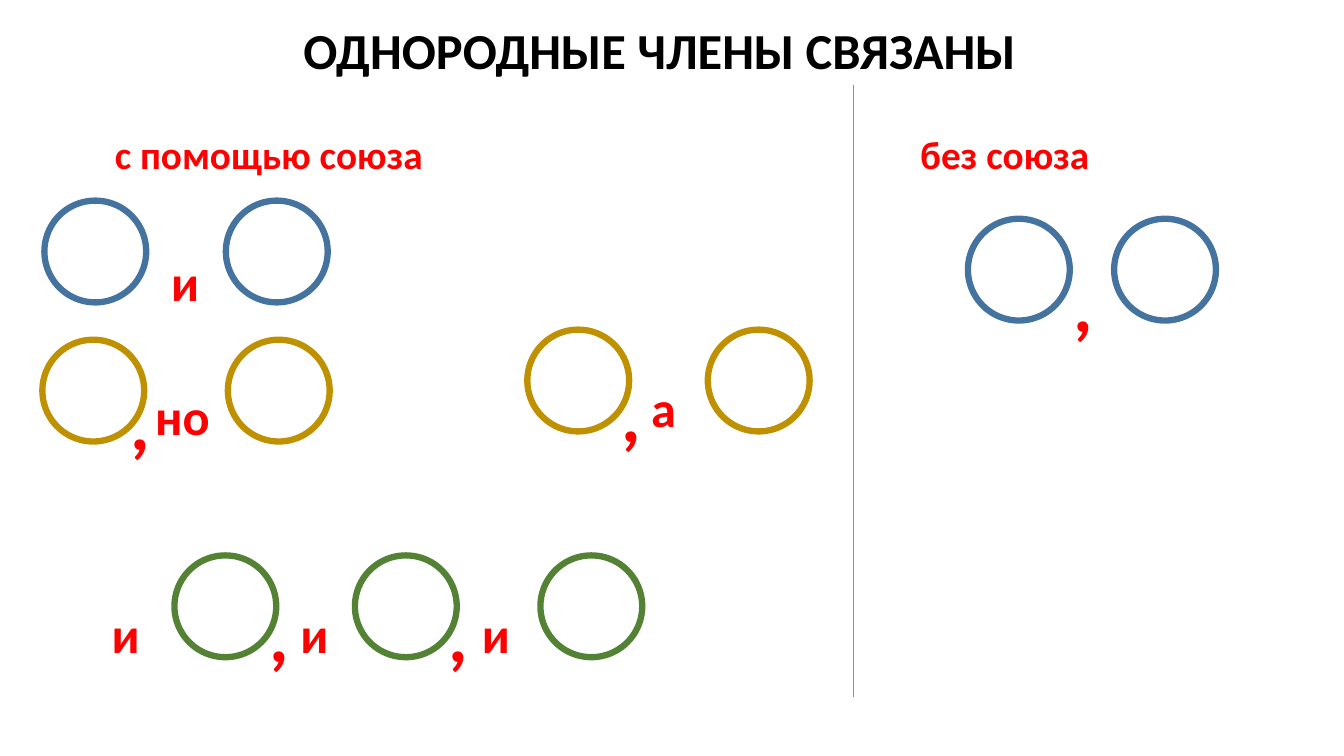
from dataclasses import dataclass

from lxml.etree import SubElement
from pptx import Presentation
from pptx.dml.color import RGBColor
from pptx.enum.shapes import MSO_CONNECTOR, MSO_SHAPE
from pptx.enum.text import MSO_ANCHOR, MSO_AUTO_SIZE, PP_ALIGN
from pptx.oxml.ns import qn
from pptx.util import Pt

EMU_PER_PX = 9144  # 100 px to the inch


@dataclass(frozen=True)
class Theme:
    font: str = "Calibri"
    black: str = "000000"
    red: str = "FF0000"
    blue: str = "43739E"
    gold: str = "BF9000"
    green: str = "548235"
    divider: str = "5B9BD5"
    heading_size: int = 28
    word_size: int = 36
    comma_size: int = 54
    ring_width: float = 4.5
    divider_width: float = 0.5


def px(*lengths):
    return [length * EMU_PER_PX for length in lengths]


def set_attributes(target, values):
    for name, value in values.items():
        setattr(target, name, value)


class SlideBuilder:
    def __init__(self, slide, theme):
        self.slide = slide
        self.theme = theme

    def fill_text(self, shape, box, text, size, color, alignment=PP_ALIGN.LEFT):
        set_attributes(shape, dict(zip(("left", "top", "width", "height"), px(*box))))
        frame = shape.text_frame
        set_attributes(frame, {
            "text": text,
            "word_wrap": True,
            "auto_size": MSO_AUTO_SIZE.NONE,
            "vertical_anchor": MSO_ANCHOR.TOP,
        })
        paragraph = frame.paragraphs[0]
        paragraph.alignment = alignment
        font = paragraph.runs[0].font
        set_attributes(font, {"name": self.theme.font, "size": Pt(size), "bold": True})
        font.color.rgb = RGBColor.from_string(color)

    def title(self, box, text):
        self.fill_text(self.slide.shapes.title, box, text,
                       self.theme.word_size, self.theme.black)

    def label(self, box, text, size, alignment=PP_ALIGN.LEFT):
        shape = self.slide.shapes.add_textbox(*px(*box))
        self.fill_text(shape, box, text, size, self.theme.red, alignment)

    def heading(self, left, text, alignment=PP_ALIGN.LEFT):
        self.label((left, 124, 345, 57), text, self.theme.heading_size, alignment)

    def conjunction(self, left, top, text):
        self.label((left, top, 79, 71), text, self.theme.word_size)

    def comma(self, left, top):
        self.label((left, top, 79, 101), ",", self.theme.comma_size)

    def ring(self, left, top, color):
        shape = self.slide.shapes.add_shape(MSO_SHAPE.OVAL, *px(left, top, 101, 101))
        shape.shadow.inherit = False
        shape.fill.background()
        shape.line.color.rgb = RGBColor.from_string(color)
        shape.line.width = Pt(self.theme.ring_width)

    def divider(self, left, top, bottom):
        connector = self.slide.shapes.add_connector(
            MSO_CONNECTOR.STRAIGHT, *px(left, top, left, bottom))
        connector.line.color.rgb = RGBColor.from_string(self.theme.divider)
        connector.line.width = Pt(self.theme.divider_width)
        SubElement(connector._element.spPr, qn("a:effectLst"))

    def scheme(self, top, color, rings, words=(), word_top=0, commas=(), comma_top=0):
        """Draw one row of rings with its conjunctions and commas."""
        for left in rings:
            self.ring(left, top, color)
        for left, word in words:
            self.conjunction(left, word_top, word)
        for left in commas:
            self.comma(left, comma_top)


def main():
    presentation = Presentation()
    presentation.slide_width, presentation.slide_height = px(1333, 750)
    slide = presentation.slides.add_slide(presentation.slide_layouts[5])
    theme = Theme()
    builder = SlideBuilder(slide, theme)

    builder.title((291, 14, 799, 71), "ОДНОРОДНЫЕ ЧЛЕНЫ СВЯЗАНЫ")
    builder.divider(846, 84, 691)
    builder.heading(104, "с помощью союза")
    builder.heading(824, "без союза", PP_ALIGN.CENTER)

    builder.scheme(199, theme.blue, (44, 224), [(160, "и")], 244)
    builder.scheme(337, theme.gold, (42, 226), [(144, "но")], 377, [120], 367)
    builder.scheme(327, theme.gold, (523, 702), [(636, "а")], 369, [607], 359)
    builder.scheme(551, theme.green, (173, 352, 536),
                   [(101, "и"), (288, "и"), (468, "и")], 593, [257, 435], 577)
    builder.scheme(217, theme.blue, (960, 1105), commas=[1055], comma_top=250)

    presentation.save("out.pptx")


if __name__ == "__main__":
    main()
